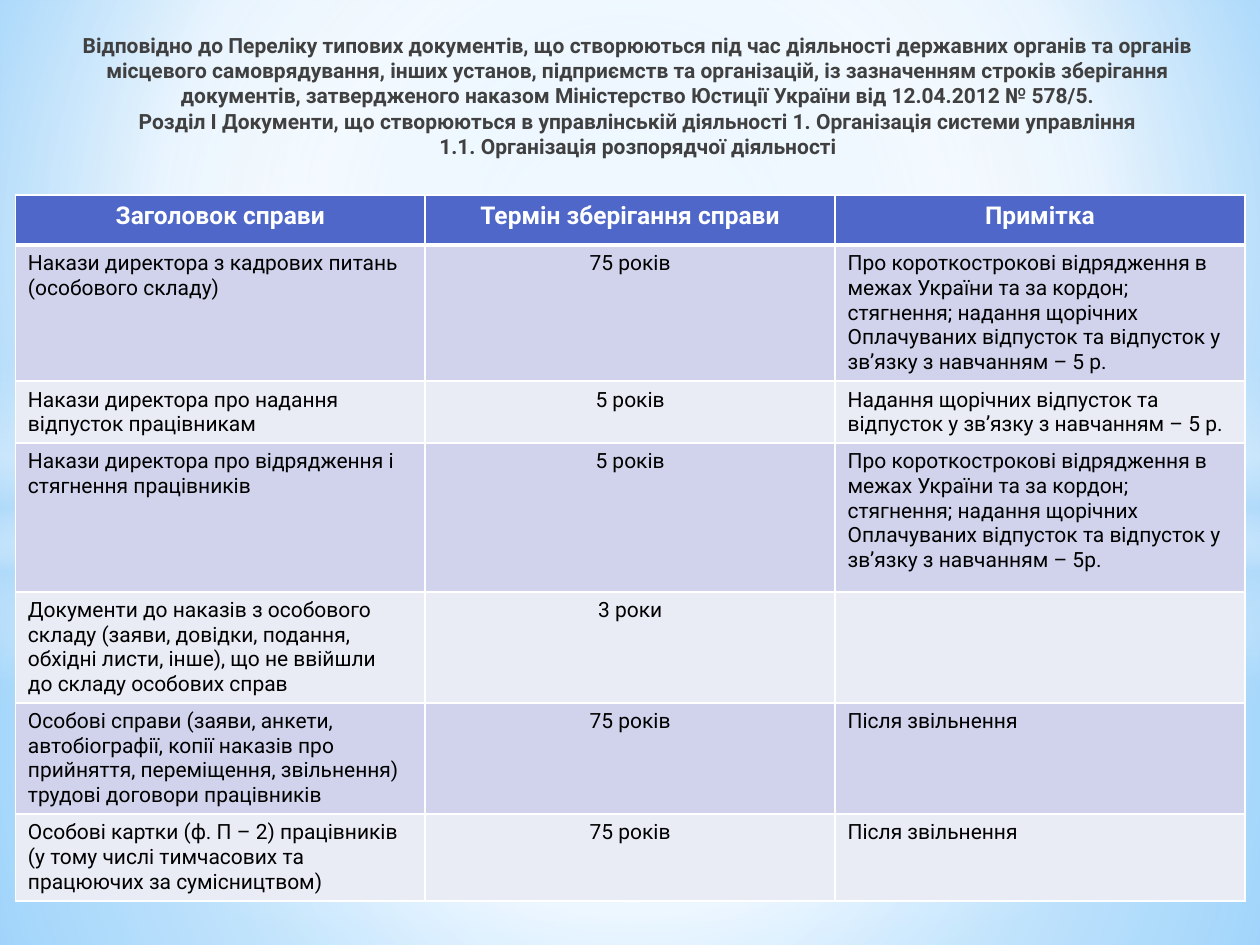
from lxml import etree
from pptx import Presentation
from pptx.dml.color import RGBColor
from pptx.enum.shapes import MSO_SHAPE
from pptx.enum.text import MSO_ANCHOR, MSO_AUTO_SIZE, PP_ALIGN
from pptx.oxml import parse_xml
from pptx.util import Pt

RECTANGLE, OVAL = MSO_SHAPE.RECTANGLE, MSO_SHAPE.OVAL
LEFT, CENTER = PP_ALIGN.LEFT, PP_ALIGN.CENTER
TOP, MIDDLE = MSO_ANCHOR.TOP, MSO_ANCHOR.MIDDLE
NO_AUTOFIT = MSO_AUTO_SIZE.NONE
NAMESPACE = "http://schemas.openxmlformats.org/drawingml/2006/main"


def write_text(frame, text, size=12, color="000000", bold=False, align=LEFT, anchor=TOP):
    frame.text = text
    frame.word_wrap = True
    frame.vertical_anchor = anchor
    for paragraph in frame.paragraphs:
        paragraph.alignment = align
        for run in paragraph.runs:
            run.font.name = "Roboto"
            run.font.size = Pt(size)
            run.font.bold = bold
            run.font.color.rgb = RGBColor.from_string(color)


def set_gradient(fill, element, stops, focus=None):
    fill.gradient()
    stop_xml = "".join(
        f'<a:gs pos="{position * 1000}"><a:srgbClr val="{color}">'
        f'<a:alpha val="{opacity * 1000}"/></a:srgbClr></a:gs>'
        for position, color, opacity in stops
    )
    if focus:
        left, top, right, bottom = (value * 1000 for value in focus)
        shade = (f'<a:path path="circle"><a:fillToRect l="{left}" t="{top}" '
                 f'r="{right}" b="{bottom}"/></a:path>')
    else:
        shade = '<a:lin ang="5400000" scaled="0"/>'
    old = element.find(f".//{{{NAMESPACE}}}gradFill")
    old.getparent().replace(old, parse_xml(
        f'<a:gradFill xmlns:a="{NAMESPACE}" rotWithShape="1">'
        f"<a:gsLst>{stop_xml}</a:gsLst>{shade}</a:gradFill>"))


presentation = Presentation()
presentation.slide_width = Pt(720)
presentation.slide_height = Pt(540)
slide = presentation.slides.add_slide(presentation.slide_layouts[5])
set_gradient(slide.background.fill, slide.element,
             [(0, "9ED5FF", 100), (60, "FFFFFF", 100), (100, "5BB9FF", 100)],
             (20, 10, 20, 60))

title = slide.shapes.title
title.left, title.top, title.width, title.height = Pt(14.4), Pt(15), Pt(686), Pt(79.2)
write_text(
    title.text_frame,
    "Відповідно до Переліку типових документів, що створюються під час діяльності "
    "державних органів та органів місцевого самоврядування, інших установ, підприємств "
    "та організацій, із зазначенням строків зберігання документів, затвердженого наказом "
    "Міністерство Юстиції України від 12.04.2012 № 578/5.\v"
    "Розділ I Документи, що створюються в управлінській діяльності 1. Організація системи управління\v"
    "1.1. Організація розпорядчої діяльності",
    color="404040", bold=True, align=CENTER, anchor=MIDDLE)
title.text_frame.auto_size = NO_AUTOFIT
title_properties = title.text_frame.paragraphs[0]._p.get_or_add_pPr()
title_properties.set("marL", str(Pt(14.4)))
title_properties.set("indent", "0")

middle = (50, 50, 50, 50)
glows = [
    (RECTANGLE, 304.6, 235.4, middle,
     [(0, "FFFFFF", 91), (37, "FFFFFF", 76), (100, "B4DCFA", 79)]),
    (RECTANGLE, 0, 304.6, middle,
     [(0, "FFFFFF", 89), (48, "FFFFFF", 62), (100, "B4DCFA", 79)]),
    (RECTANGLE, 208.8, 180, None,
     [(0, "FFFFFF", 0), (29, "FFFFFF", 30), (45, "B4DCFA", 40),
      (55, "FFFFFF", 26), (65, "B4DCFA", 60), (100, "FFFFFF", 0)]),
    (OVAL, 126, 401.8, middle, [(0, "FFFFFF", 100), (54, "FFFFFF", 0)]),
]
for kind, top, height, focus, stops in glows:
    glow = slide.shapes.add_shape(kind, 0, Pt(top), Pt(720), Pt(height))
    glow.shadow.inherit = False
    glow.line.fill.background()
    set_gradient(glow.fill, glow.element, stops, focus)
    title.element.addprevious(glow.element)

trip_note = (
    "Про короткострокові відрядження в\nмежах України та за кордон;\n"
    "стягнення; надання щорічних\n"
    "Оплачуваних відпусток та відпусток у зв’язку з навчанням – "
)
rows = [
    (28.6, "Заголовок справи", "Термін зберігання справи", "Примітка"),
    (77.8, "Накази директора з кадрових питань (особового складу)", "75 років",
     trip_note + "5 р."),
    (35.4, "Накази директора про надання відпусток працівникам", "5 років",
     "Надання щорічних відпусток та\nвідпусток у зв’язку з навчанням – 5 р."),
    (85, "Накази директора про відрядження і стягнення працівників", "5 років",
     trip_note + "5р."),
    (63.4, "Документи до наказів з особового складу (заяви, довідки, подання, "
     "обхідні листи, інше), що не ввійшли\nдо складу особових справ", "3 роки", ""),
    (63.4, "Особові справи (заяви, анкети, автобіографії, копії наказів про "
     "прийняття, переміщення, звільнення)\nтрудові договори працівників", "75 років",
     "Після звільнення"),
    (49.8, "Особові картки (ф. П – 2) працівників (у тому числі тимчасових та "
     "працюючих за сумісництвом)", "75 років", "Після звільнення"),
]
table_height = sum(row[0] for row in rows)
table = slide.shapes.add_table(len(rows), 3, Pt(8.8), Pt(111.5), Pt(702.6), Pt(table_height)).table
for column in table.columns:
    column.width = Pt(234.2)

for row_index, (height, *texts) in enumerate(rows):
    table.rows[row_index].height = Pt(height)
    header = row_index == 0
    fill_color = "4E67C8" if header else ("E9EBF5", "D0D3EB")[row_index % 2]
    for column_index, text in enumerate(texts):
        cell = table.cell(row_index, column_index)
        write_text(cell.text_frame, text,
                   size=14 if header else 12,
                   color="FFFFFF" if header else "000000",
                   bold=header,
                   align=CENTER if header or column_index == 1 else LEFT)
        properties = cell._tc.get_or_add_tcPr()
        for side in ("L", "R", "T", "B"):
            thick = (header and side == "B") or (row_index == 1 and side == "T")
            border = etree.SubElement(properties, f"{{{NAMESPACE}}}ln{side}",
                                      w=str(Pt(3 if thick else 1)))
            solid = etree.SubElement(border, f"{{{NAMESPACE}}}solidFill")
            etree.SubElement(solid, f"{{{NAMESPACE}}}srgbClr", val="FFFFFF")
        cell.fill.solid()
        cell.fill.fore_color.rgb = RGBColor.from_string(fill_color)

presentation.save("out.pptx")
